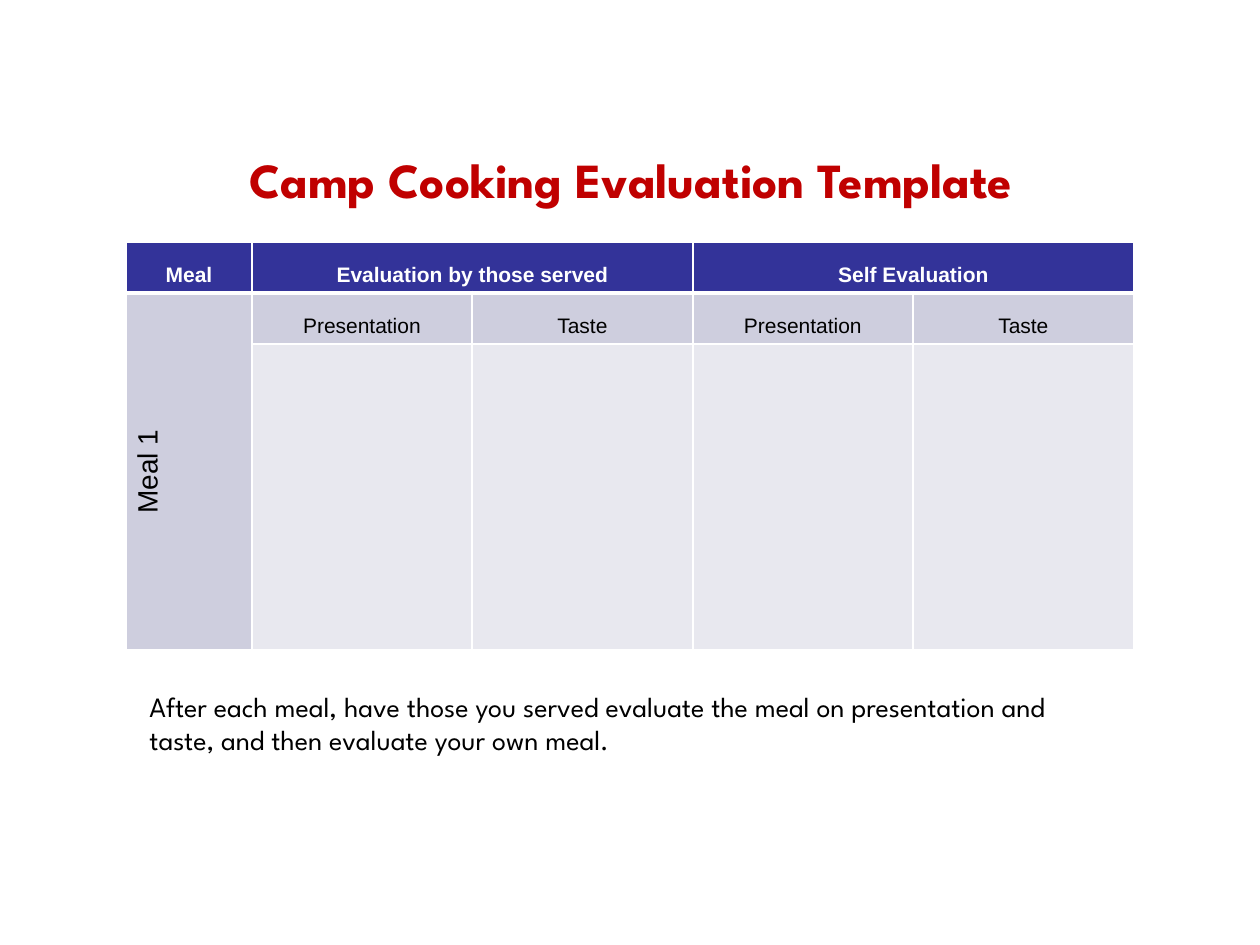
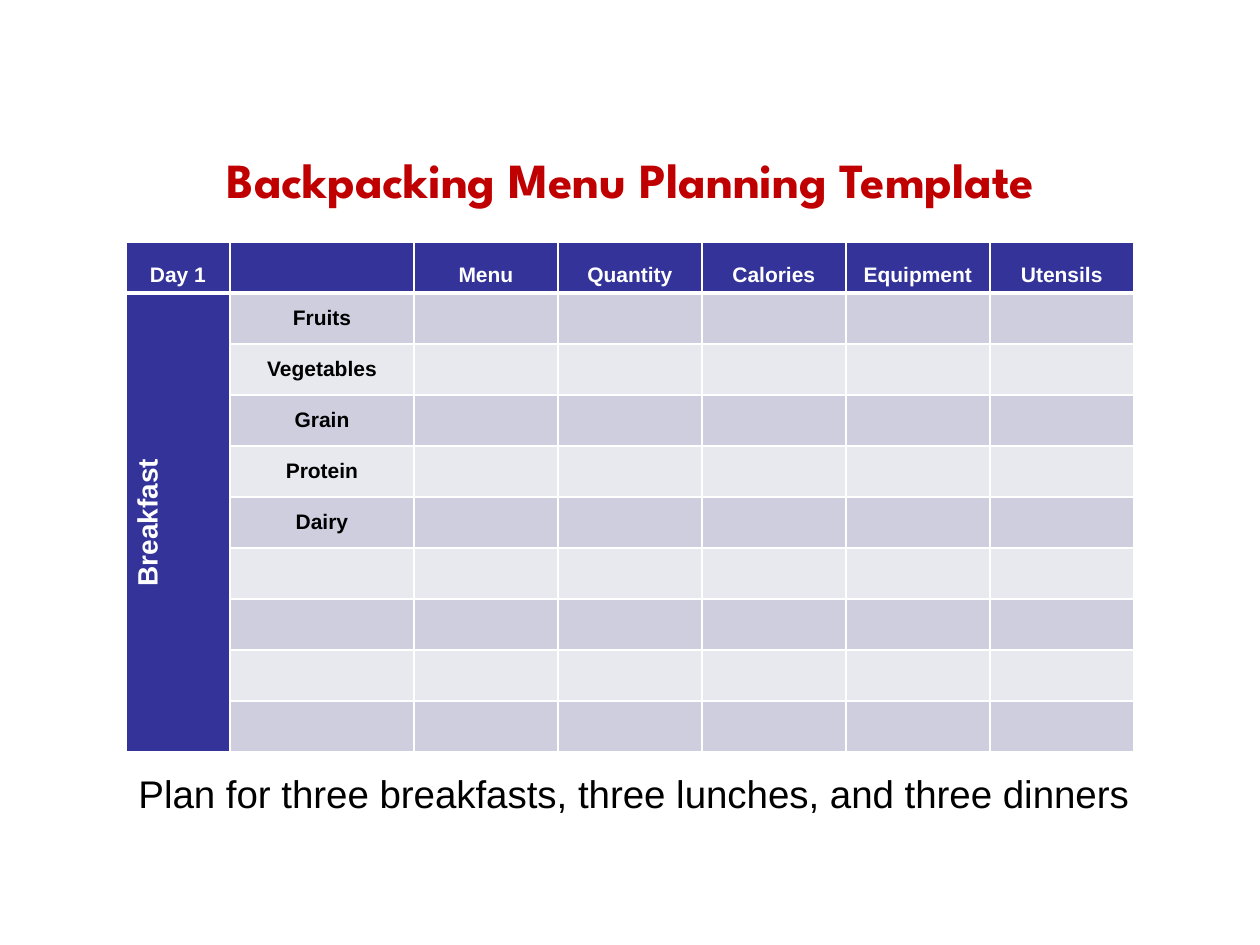
from lxml.etree import SubElement
from pptx import Presentation
from pptx.dml.color import RGBColor
from pptx.enum.text import MSO_ANCHOR, PP_ALIGN
from pptx.oxml.ns import qn
from pptx.util import Emu, Pt

NAVY = RGBColor(0x33, 0x33, 0x99)
RED = RGBColor(0xC0, 0x00, 0x00)
BLACK = RGBColor(0x00, 0x00, 0x00)
WHITE = RGBColor(0xFF, 0xFF, 0xFF)
BANDS = RGBColor(0xCE, 0xCE, 0xDE), RGBColor(0xE8, 0xE8, 0xEF)
SPARTAN = "League Spartan"
ARIAL = "Arial"
ROW = 51


def px(count):
    return Emu(round(count * 914400 / 126))


def style(para, face, size, color, bold=False):
    for run in para.runs:
        font = run.font
        font.name, font.size, font.bold = face, Pt(size), bold
        font.color.rgb = color


def add_text(slide, box, text, face, size, color, bold=False,
             align=PP_ALIGN.LEFT, anchor=MSO_ANCHOR.TOP):
    frame = slide.shapes.add_textbox(*map(px, box)).text_frame
    frame.word_wrap = True
    frame.vertical_anchor = anchor
    para = frame.paragraphs[0]
    para.text = text
    para.alignment = align
    style(para, face, size, color, bold)


def add_title(slide, text):
    add_text(slide, (137, 126, 987, 105), text, SPARTAN, 28, RED, True,
             PP_ALIGN.CENTER, MSO_ANCHOR.MIDDLE)


def add_edges(cell, top, bottom):
    props = cell._tc.get_or_add_tcPr()
    for side, width in zip("LRTB", (1, 1, top, bottom)):
        line = SubElement(props, qn(f"a:ln{side}"), w=str(Pt(width)))
        fill = SubElement(line, qn("a:solidFill"))
        SubElement(fill, qn("a:srgbClr"), val=str(WHITE))


def add_grid(slide, box, cols, rows):
    shape = slide.shapes.add_table(len(rows), len(cols), *map(px, box))
    grid = shape.table
    for col, width in zip(grid.columns, cols):
        col.width = px(width)
    for row, height in zip(grid.rows, rows):
        row.height = px(height)
    for r, row in enumerate(grid.rows):
        for cell in row.cells:
            add_edges(cell, 3 if r == 1 else 1, 3 if r == 0 else 1)
            cell.fill.solid()
            cell.fill.fore_color.rgb = BANDS[(r - 1) % 2] if r else NAVY
            para = cell.text_frame.paragraphs[0]
            SubElement(para._p, qn("a:endParaRPr"), sz="1200")
    return grid


def label(cell, text, color, bold, size=12, anchor=MSO_ANCHOR.BOTTOM):
    para = cell.text_frame.paragraphs[0]
    para.add_run().text = text
    para.alignment = PP_ALIGN.CENTER
    cell.vertical_anchor = anchor
    style(para, ARIAL, size, color, bold)


def add_head(grid, heads):
    for col, text in heads.items():
        label(grid.cell(0, col), text, WHITE, True)


def add_side(grid, text, color, bold):
    cell = grid.cell(1, 0)
    cell.merge(grid.cell(len(grid.rows) - 1, 0))
    label(cell, text, color, bold, 16, MSO_ANCHOR.MIDDLE)
    cell._tc.get_or_add_tcPr().set("vert", "vert270")


def add_review(slide, box):
    grid = add_grid(slide, box, [126, 220, 221, 220, 221], [ROW, ROW, 6 * ROW])
    for col in (1, 3):
        grid.cell(0, col).merge(grid.cell(0, col + 1))
    add_head(grid, {0: "Meal", 1: "Evaluation by those served",
                    3: "Self Evaluation"})
    add_side(grid, "Meal 1", BLACK, False)
    for col, text in enumerate(("Presentation", "Taste") * 2, 1):
        label(grid.cell(1, col), text, BLACK, False)


def add_menu(slide, box):
    grid = add_grid(slide, box, [104, 184] + [144] * 5, [ROW] * 10)
    add_head(grid, {0: "Day 1", 2: "Menu", 3: "Quantity", 4: "Calories",
                    5: "Equipment", 6: "Utensils"})
    for row in range(1, 10):
        fill = grid.cell(row, 0).fill
        fill.solid()
        fill.fore_color.rgb = NAVY
    add_side(grid, "Breakfast", WHITE, True)
    foods = "Fruits", "Vegetables", "Grain", "Protein", "Dairy"
    for row, text in enumerate(foods, 1):
        label(grid.cell(row, 1), text, BLACK, True, anchor=MSO_ANCHOR.MIDDLE)


def main():
    deck = Presentation()
    deck.slide_width, deck.slide_height = px(1260), px(945)
    blank = deck.slide_layouts[6]

    slide = deck.slides.add_slide(blank)
    add_title(slide, "Camp Cooking Evaluation Template")
    add_review(slide, (126, 242, 1008, 8 * ROW))
    add_text(slide, (137, 683, 975, 81),
             "After each meal, have those you served evaluate the meal on "
             "presentation and taste, and then evaluate your own meal.",
             SPARTAN, 16, BLACK)

    slide = deck.slides.add_slide(blank)
    add_title(slide, "Backpacking Menu Planning Template")
    add_menu(slide, (126, 242, 1008, 10 * ROW))
    add_text(slide, (126, 764, 1029, 59),
             "Plan for three breakfasts, three lunches, and three dinners",
             ARIAL, 22, BLACK)

    deck.save("out.pptx")


if __name__ == "__main__":
    main()
